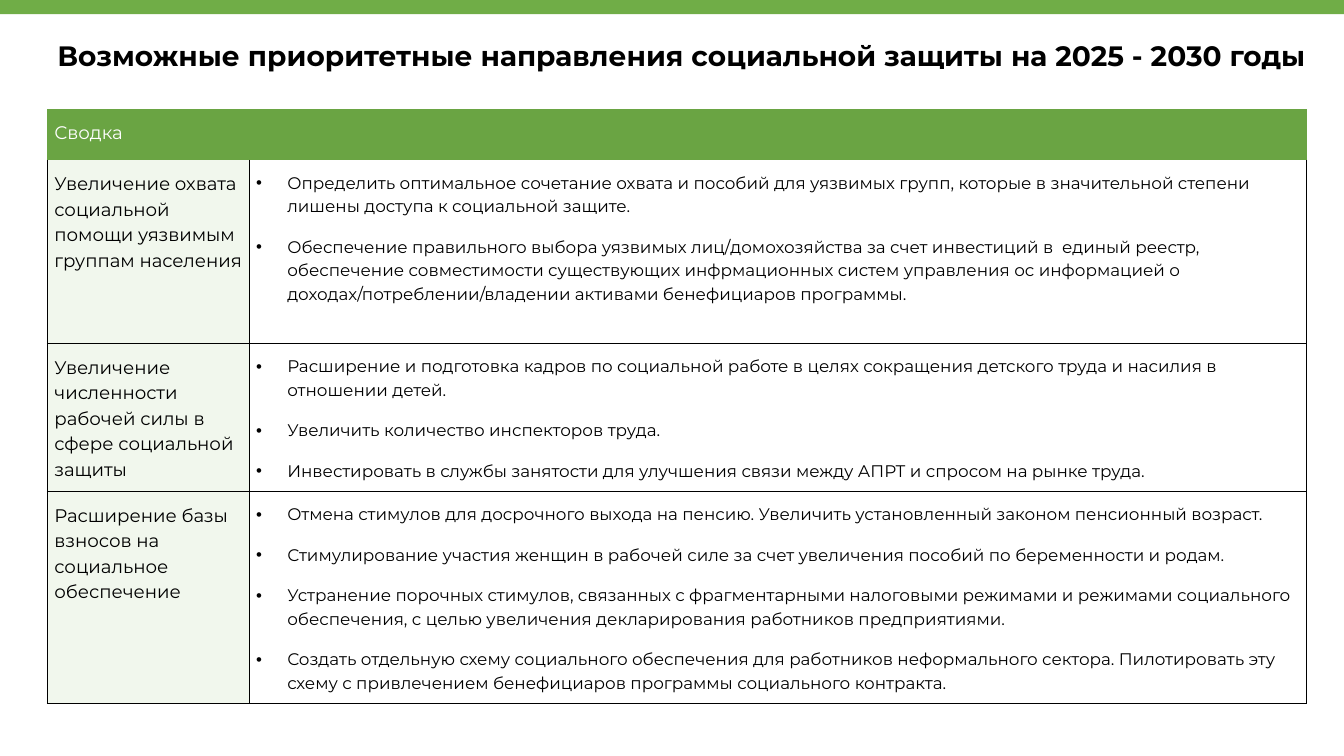
from lxml import etree
from pptx import Presentation
from pptx.dml.color import RGBColor
from pptx.enum.shapes import MSO_SHAPE
from pptx.enum.text import MSO_AUTO_SIZE
from pptx.oxml.ns import qn
from pptx.util import Inches, Pt

RECT = MSO_SHAPE.RECTANGLE
GROW = MSO_AUTO_SIZE.SHAPE_TO_FIT_TEXT

COLORS = {"bar": "70AD47", "head": "6AA443", "side": "F1F7ED",
          "text": "000000", "light": "FFFFFF", "line": "000000"}
PARA = {"line_spacing": 1.15, "space_before": Pt(6), "space_after": Pt(6)}
INSETS = {"margin_left": Inches(0.07), "margin_right": Inches(0.07),
          "margin_top": Inches(0.1), "margin_bottom": Inches(0.1)}
INDENT = Inches(0.31)
COLS = [2, 10.49]
ROWS = [0.47, 1.82, 1.38, 1.38]

TITLE = "Возможные приоритетные направления социальной защиты на 2025 - 2030 годы"
HEAD = "Сводка"
TOPICS = [
    ("Увеличение охвата социальной помощи уязвимым группам населения", [
        "Определить оптимальное сочетание охвата и пособий для уязвимых групп, "
        "которые в значительной степени лишены доступа к социальной защите.",
        "Обеспечение правильного выбора уязвимых лиц/домохозяйства за счет "
        "инвестиций в  единый реестр, обеспечение совместимости существующих "
        "инфрмационных систем управления ос информацией о "
        "доходах/потреблении/владении активами бенефициаров программы.",
    ]),
    ("Увеличение численности рабочей силы в сфере социальной защиты", [
        "Расширение и подготовка кадров по социальной работе в целях сокращения "
        "детского труда и насилия в отношении детей.",
        "Увеличить количество инспекторов труда.",
        "Инвестировать в службы занятости для улучшения связи между АПРТ и "
        "спросом на рынке труда.",
    ]),
    ("Расширение базы взносов на социальное обеспечение", [
        "Отмена стимулов для досрочного выхода на пенсию. Увеличить "
        "установленный законом пенсионный возраст.",
        "Стимулирование участия женщин в рабочей силе за счет увеличения "
        "пособий по беременности и родам.",
        "Устранение порочных стимулов, связанных с фрагментарными налоговыми "
        "режимами и режимами социального обеспечения, с целью увеличения "
        "декларирования работников предприятиями.",
        "Создать отдельную схему социального обеспечения для работников "
        "неформального сектора. Пилотировать эту схему с привлечением "
        "бенефициаров программы социального контракта.",
    ]),
]


def color(name):
    return RGBColor.from_string(COLORS[name])


def apply(obj, values):
    for key, value in values.items():
        setattr(obj, key, value)


def write(frame, lines, size, ink="text", bold=False, dots=False):
    for i, line in enumerate(lines):
        para = frame.paragraphs[0] if i == 0 else frame.add_paragraph()
        apply(para, PARA)
        run = para.add_run()
        run.text = line
        apply(run.font, {"name": "Montserrat", "size": Pt(size), "bold": bold})
        run.font.color.rgb = color(ink)
        if dots:
            props = para._p.get_or_add_pPr()
            props.set("marL", str(INDENT))
            props.set("indent", str(-INDENT))
            etree.SubElement(props, qn("a:buFont"), typeface="Arial")
            etree.SubElement(props, qn("a:buChar"), char="•")


def edge(cell, sides):
    props = cell._tc.get_or_add_tcPr()
    for side in "LRTB":
        line = etree.SubElement(props, qn("a:ln" + side), w=str(Pt(0.75)))
        if side in sides:
            fill = etree.SubElement(line, qn("a:solidFill"))
            etree.SubElement(fill, qn("a:srgbClr"), val=COLORS["line"])
        else:
            etree.SubElement(line, qn("a:noFill"))


def style(cell, sides, fill=None):
    apply(cell, INSETS)
    edge(cell, sides)
    if fill:
        cell.fill.solid()
        cell.fill.fore_color.rgb = color(fill)
    else:
        cell.fill.background()


def add_bar(slide, box):
    bar = slide.shapes.add_shape(RECT, *map(Inches, box))
    bar.shadow.inherit = False
    bar.fill.solid()
    bar.fill.fore_color.rgb = color("bar")
    bar.line.fill.background()


def add_title(slide, box):
    frame = slide.shapes.add_textbox(*map(Inches, box)).text_frame
    apply(frame, {"word_wrap": True, "auto_size": GROW})
    write(frame, [TITLE], 20, bold=True)


def add_grid(slide, box):
    grid = slide.shapes.add_table(len(ROWS), len(COLS), *map(Inches, box)).table
    apply(grid, {"first_row": False, "horz_banding": False})
    for col, width in zip(grid.columns, COLS):
        col.width = Inches(width)
    for row, height in zip(grid.rows, ROWS):
        row.height = Inches(height)

    # Header row
    for c in range(len(COLS)):
        style(grid.cell(0, c), "", "head")
    write(grid.cell(0, 0).text_frame, [HEAD], 13, "light")

    # Topic rows
    for r, (topic, points) in enumerate(TOPICS, 1):
        sides = "LRB" if r == 1 else "LRTB"
        left, right = grid.cell(r, 0), grid.cell(r, 1)
        style(left, sides, "side")
        style(right, sides)
        write(left.text_frame, [topic], 13)
        write(right.text_frame, points, 12, dots=True)


def main():
    deck = Presentation()
    apply(deck, {"slide_width": Inches(13.33), "slide_height": Inches(7.5)})
    slide = deck.slides.add_slide(deck.slide_layouts[6])
    add_bar(slide, (0, 0, 13.33, 0.14))
    add_grid(slide, (0.47, 1.08, sum(COLS), sum(ROWS)))
    add_title(slide, (0.47, 0.28, 12.61, 0.66))
    deck.save("out.pptx")


if __name__ == "__main__":
    main()
